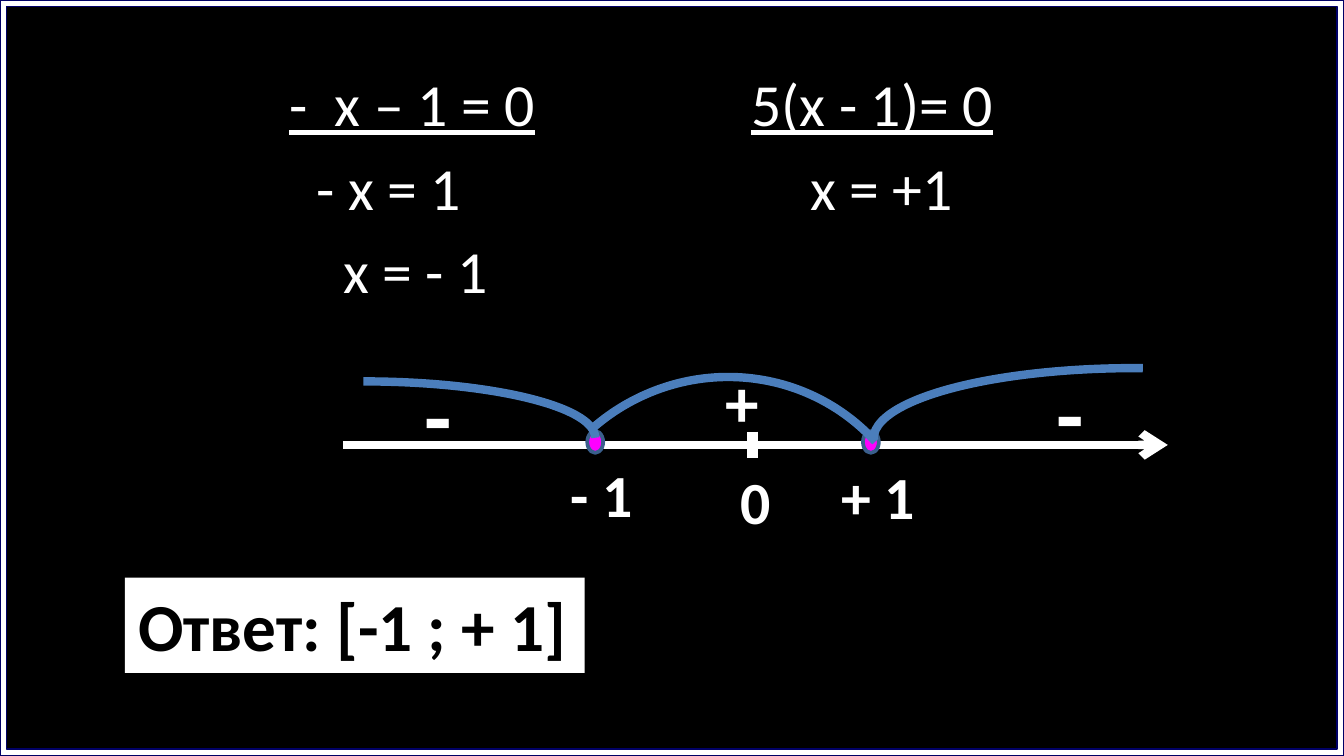
from typing import NamedTuple

from lxml import etree
from pptx import Presentation
from pptx import util as u
from pptx.dml.color import RGBColor
from pptx.enum import shapes, text
from pptx.oxml.ns import qn

WHITE, BLACK, NAVY = "FFFFFF", "000000", "000066"
MAGENTA, DOT_EDGE, ARC_BLUE = "FF00FF", "3A5F8C", "4B7EBC"
FONT = "Calibri"
AXIS_Y = 8.41


class Label(NamedTuple):
    words: str
    left: float
    top: float
    width: float
    height: float
    size: int = 32
    color: str = WHITE
    fill: str | None = None


class Arc(NamedTuple):
    left: float
    top: float
    width: float
    height: float
    rotation: float = 0
    start: float = 162
    flipped: bool = False


class EquationRow(NamedTuple):
    left: str
    left_tab: float
    right: str = ""
    right_tab: float = 0
    underlined: bool = False


EQUATIONS = [
    EquationRow("-  х – 1 = 0", 4.08, "5(х - 1)= 0", 12.81, True),
    EquationRow("- х = 1", 4.59, "х = +1", 13.92),
    EquationRow("х = - 1", 5.1),
]
ROOTS = [11.1, 16.31]
ARCS = [
    Arc(2.49, 7.21, 8.76, 2.13),
    Arc(16.51, 6.96, 9.86, 2.67, start=157.93, flipped=True),
    Arc(9.83, 7.16, 7.72, 7.57, rotation=317.7),
]
LABELS = [
    Label("- 1", 10.54, 8.53, 1.7, 1.63),
    Label("+ 1", 15.65, 8.56, 1.93, 1.63),
    Label("0", 13.74, 8.66, 1.09, 1.63),
    Label("+", 13.46, 6.68, 1.14, 1.8, 36),
    Label("-", 7.77, 6.68, 1.04, 2.31, 48),
    Label("-", 19.71, 6.65, 1.04, 2.31, 48),
    Label("Ответ: [-1 ; + 1]", 2.36, 10.92, 8.69, 1.8, 36, BLACK, WHITE),
]


def rgb(value: str) -> RGBColor:
    return RGBColor.from_string(value)


def cm(*lengths: float) -> list[u.Cm]:
    return [u.Cm(length) for length in lengths]


def set_fill(shape, color: str | None) -> None:
    if color:
        shape.fill.solid()
        shape.fill.fore_color.rgb = rgb(color)
    else:
        shape.fill.background()


def set_line(shape, color: str, points: float) -> None:
    shape.line.color.rgb = rgb(color)
    shape.line.width = u.Pt(points)


def set_font(font, size: int, color: str, bold: bool = False) -> None:
    font.name, font.size, font.bold = FONT, u.Pt(size), bold
    font.color.rgb = rgb(color)


def add_preset(page, kind, bounds, fill: str | None, line: str, points: float):
    shape = page.shapes.add_shape(kind, *cm(*bounds))
    shape.shadow.inherit = False
    set_fill(shape, fill)
    set_line(shape, line, points)
    return shape


def add_arc(page, arc: Arc) -> None:
    shape = add_preset(page, shapes.MSO_SHAPE.ARC, arc[:4], None, ARC_BLUE, 4.5)
    shape.rotation = arc.rotation
    shape.adjustments[0] = arc.start
    if arc.flipped:
        shape._element.spPr.find(qn("a:xfrm")).set("flipH", "1")


def add_line(page, start, end, points: float, arrow: bool = False) -> None:
    line = page.shapes.add_connector(
        shapes.MSO_CONNECTOR.STRAIGHT, *cm(*start, *end))
    set_line(line, WHITE, points)
    if arrow:
        etree.SubElement(line.line._get_or_add_ln(), qn("a:tailEnd"), type="arrow")
    etree.SubElement(line._element.spPr, qn("a:effectLst"))


def add_label(page, label: Label) -> None:
    box = page.shapes.add_textbox(*cm(*label[1:5]))
    set_fill(box, label.fill)
    frame = box.text_frame
    frame.word_wrap = False
    frame.auto_size = text.MSO_AUTO_SIZE.SHAPE_TO_FIT_TEXT
    para = frame.paragraphs[0]
    para.add_run().text = label.words
    set_font(para.font, label.size, label.color, bold=True)


def add_equations(page, rows: list[EquationRow]) -> None:
    """Set both solutions in one box, aligned by tab stops."""
    frame = page.shapes.add_textbox(*cm(1.14, 1.14, 22.86, 11.6)).text_frame
    frame.word_wrap = True
    for index, row in enumerate(rows):
        para = frame.add_paragraph() if index else frame.paragraphs[0]
        if index:
            para.space_before = u.Pt(6.4)
        tabs = etree.SubElement(para._p.get_or_add_pPr(), qn("a:tabLst"))
        for words, stop in ((row.left, row.left_tab), (row.right, row.right_tab)):
            if words:
                etree.SubElement(tabs, qn("a:tab"), pos=str(u.Cm(stop)), algn="l")
                para.add_run().text = "\t"
                span = para.add_run()
                span.text = words
                if row.underlined:
                    span.font.underline = True
        set_font(para.font, 32, WHITE)


def main() -> None:
    deck = Presentation()
    deck.slide_width, deck.slide_height = cm(25.4, 14.29)
    page = deck.slides.add_slide(deck.slide_layouts[6])
    set_fill(page.background, BLACK)

    border = add_preset(page, shapes.MSO_SHAPE.FRAME, (0, 0, 25.4, 14.29),
                        WHITE, NAVY, 0.75)
    border.adjustments[0] = 0.009
    add_equations(page, EQUATIONS)

    add_line(page, (6.48, AXIS_Y), (22.07, AXIS_Y), 4.5, arrow=True)
    for root in ROOTS:
        add_preset(page, shapes.MSO_SHAPE.OVAL, (root, 8.15, 0.3, 0.41),
                   MAGENTA, DOT_EDGE, 2)
    for arc in ARCS:
        add_arc(page, arc)
    add_line(page, (14.22, AXIS_Y - 0.25), (14.22, AXIS_Y + 0.25), 6)
    for label in LABELS:
        add_label(page, label)
    deck.save("out.pptx")


if __name__ == "__main__":
    main()
